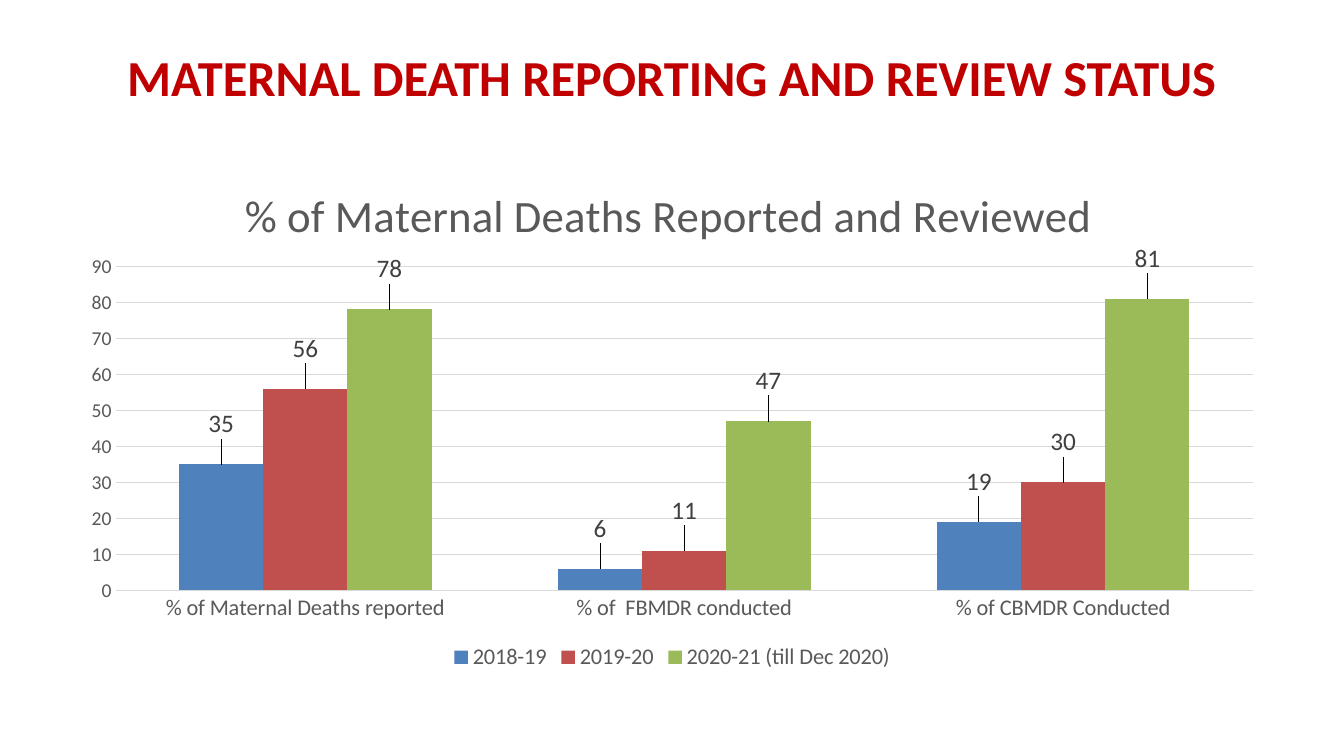
from dataclasses import dataclass

from lxml.etree import SubElement
from pptx import Presentation
from pptx.chart.data import CategoryChartData
from pptx.dml.color import RGBColor
from pptx.enum.chart import XL_CHART_TYPE as ChartType
from pptx.enum.chart import XL_LABEL_POSITION as LabelPos
from pptx.enum.chart import XL_LEGEND_POSITION as LegendPos
from pptx.enum.chart import XL_TICK_MARK as TickMark
from pptx.enum.text import MSO_ANCHOR, PP_ALIGN
from pptx.oxml.ns import qn
from pptx.util import Cm, Pt

FONT = "Calibri"
GREY = "595959"
LABEL_LIFT = -0.04


@dataclass
class Year:
    name: str
    values: tuple[int, ...]
    color: str


CATEGORIES = (
    "% of Maternal Deaths reported",
    "% of  FBMDR conducted",
    "% of CBMDR Conducted",
)
YEARS = (
    Year("2018-19", (35, 6, 19), "4F81BD"),
    Year("2019-20", (56, 11, 30), "C0504D"),
    Year("2020-21 (till Dec 2020)", (78, 47, 81), "9BBB59"),
)


def rgb(value: str) -> RGBColor:
    return RGBColor.from_string(value)


def set_font(font, size: float, color: str, bold: bool = False) -> None:
    font.name = FONT
    font.size = Pt(size)
    font.bold = bold
    font.color.rgb = rgb(color)


def set_layout(parent, index: int, **settings) -> None:
    """Place a chart part by fractions of the chart's size."""
    for old in parent.findall(qn("c:layout")):
        parent.remove(old)
    layout = SubElement(parent, qn("c:layout"))
    parent.insert(index, layout)
    manual = SubElement(layout, qn("c:manualLayout"))
    for name, value in settings.items():
        SubElement(manual, qn(f"c:{name}")).set("val", str(value))


def add_heading(slide) -> None:
    tf = slide.shapes.add_textbox(0, 0, Cm(33.87), Cm(3.07)).text_frame
    tf.word_wrap = True
    tf.vertical_anchor = MSO_ANCHOR.MIDDLE
    p = tf.paragraphs[0]
    p.text = "MATERNAL DEATH REPORTING AND REVIEW STATUS"
    p.alignment = PP_ALIGN.CENTER
    p.line_spacing = 1.5
    set_font(p.runs[0].font, 36, "C00000", bold=True)


def format_axis(axis, size: float) -> None:
    axis.major_tick_mark = axis.minor_tick_mark = TickMark.NONE
    axis.format.line.fill.background()
    set_font(axis.tick_labels.font, size, GREY)


def format_series(series, year: Year) -> None:
    series.format.fill.solid()
    series.format.fill.fore_color.rgb = rgb(year.color)
    series.invert_if_negative = False
    labels = series.data_labels
    labels.show_value = True
    labels.number_format = "0"
    labels.number_format_is_linked = False
    labels.position = LabelPos.OUTSIDE_END
    set_font(labels.font, 18, "404040")
    # Raise each value a little above its bar
    for i in range(len(year.values)):
        label = series.points[i].data_label
        label.position = LabelPos.OUTSIDE_END
        set_font(label.font, 18, "404040")
    for element in labels._element.findall(qn("c:dLbl")):
        set_layout(element, 1, x=0, y=LABEL_LIFT)


def add_review_chart(slide) -> None:
    data = CategoryChartData(number_format="0")
    data.categories = CATEGORIES
    for year in YEARS:
        data.add_series(year.name, year.values)
    chart = slide.shapes.add_chart(
        ChartType.COLUMN_CLUSTERED, Cm(1.7), Cm(3.63), Cm(30.48), Cm(13.39), data
    ).chart
    set_font(chart.font, 10, "000000")

    # Chart title
    chart.has_title = True
    title = chart.chart_title
    title.include_in_layout = False
    p = title.text_frame.paragraphs[0]
    p.text = "% of Maternal Deaths Reported and Reviewed"
    set_font(p.runs[0].font, 32, GREY)
    set_layout(title._element, 1, xMode="edge", yMode="edge", x=0.14, y=0.06)

    # Axes
    format_axis(chart.category_axis, 16)
    scale = chart.value_axis
    format_axis(scale, 14)
    scale.minimum_scale, scale.maximum_scale, scale.major_unit = 0, 90, 10
    scale.tick_labels.number_format = "0"
    scale.tick_labels.number_format_is_linked = False
    grid = scale.major_gridlines.format.line
    grid.color.rgb = rgb("D9D9D9")
    grid.width = Pt(0.75)

    # Bars
    plot = chart.plots[0]
    plot.gap_width, plot.overlap = 150, 0
    plot.vary_by_categories = False
    for series, year in zip(plot.series, YEARS):
        format_series(series, year)
    area = chart._chartSpace.chart.plotArea
    set_layout(area, 0, layoutTarget="inner", xMode="edge", yMode="edge",
               x=0.04, y=0.23, w=0.94, h=0.61)

    # Legend
    chart.has_legend = True
    chart.legend.position = LegendPos.BOTTOM
    chart.legend.include_in_layout = False
    set_font(chart.legend.font, 16, GREY)


def main() -> None:
    prs = Presentation()
    prs.slide_width, prs.slide_height = Cm(33.87), Cm(19.05)
    s = prs.slides.add_slide(prs.slide_layouts[6])
    add_heading(s)
    add_review_chart(s)
    prs.save("out.pptx")


if __name__ == "__main__":
    main()
